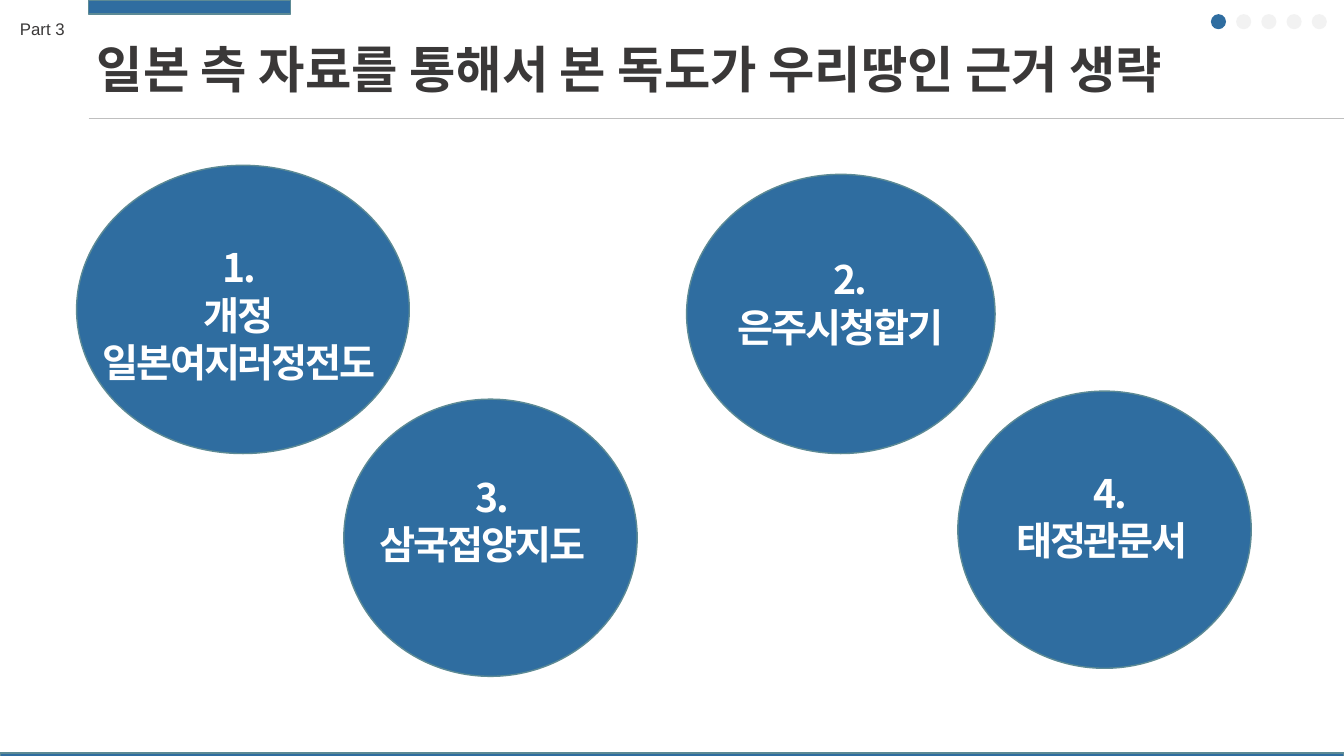
from lxml.etree import SubElement
from pptx import Presentation
from pptx.dml.color import RGBColor
from pptx.enum.shapes import MSO_CONNECTOR, MSO_SHAPE
from pptx.enum.text import MSO_ANCHOR, MSO_AUTO_SIZE, PP_ALIGN
from pptx.oxml.ns import qn
from pptx.util import Inches, Pt

BLUE = RGBColor(0x2F, 0x6D, 0xA0)
EDGE = RGBColor(0x5C, 0x8A, 0x95)
DARK = RGBColor(0x3A, 0x38, 0x38)
PALE = RGBColor(0xF2, 0xF2, 0xF2)
RULE = RGBColor(0xBF, 0xBF, 0xBF)
WHITE = RGBColor(0xFF, 0xFF, 0xFF)
KOREAN = "Noto Sans CJK KR"
LEFT, CENTER = PP_ALIGN.LEFT, PP_ALIGN.CENTER

SOURCES = [
    (["1.", "개정", "일본여지러정전도"], (0.76, 1.64, 3.3, 2.86),
     (0.02, 0.72, 3.18, 1.51), CENTER),
    (["2.", "은주시청합기"], (6.81, 1.73, 3.06, 2.77),
     (0.41, 0.75, 2.43, 1.04), LEFT),
    (["3.", "삼국접양지도"], (3.41, 3.96, 2.91, 2.75),
     (0.26, 0.68, 2.43, 1.04), LEFT),
    (["4.", "태정관문서"], (9.5, 3.88, 2.91, 2.75),
     (0.48, 0.72, 2.06, 1.04), LEFT),
]


def inches(box):
    return [Inches(length) for length in box]


def write(holder, lines, size, color, font=KOREAN, bold=False,
          spacing=0, pitch=None, aligns=(LEFT,)):
    frame = holder.text_frame
    frame.word_wrap = True
    frame.auto_size = MSO_AUTO_SIZE.NONE
    frame.vertical_anchor = MSO_ANCHOR.TOP
    frame.text = "\n".join(lines)
    for paragraph, align in zip(frame.paragraphs, aligns):
        paragraph.alignment = align
        if pitch:
            paragraph.line_spacing = Pt(pitch)
        run = paragraph.runs[0]
        run.font.size = Pt(size)
        run.font.bold = bold
        run.font.color.rgb = color
        run.font.name = font
        properties = run.font._element
        SubElement(properties, qn("a:ea")).set("typeface", font)
        if spacing:
            properties.set("spc", str(round(spacing * 100)))


def add_filled(slide, kind, box, fill, edge=None):
    shape = slide.shapes.add_shape(kind, *inches(box))
    shape.shadow.inherit = False
    shape.fill.solid()
    shape.fill.fore_color.rgb = fill
    if edge is None:
        shape.line.fill.background()
    else:
        shape.line.color.rgb = edge
        shape.line.width = Pt(1)


def add_header(slide, box):
    left, top, width, height = box
    add_filled(slide, MSO_SHAPE.RECTANGLE, (left, top, 2, 0.14), BLUE, EDGE)

    title = slide.shapes.title
    title.left, title.top, title.width, title.height = inches(
        (left - 0.02, top + 0.32, 12.22, 0.71))
    write(title, ["일본 측 자료를 통해서 본 독도가 우리땅인 근거 생략"],
          36, DARK, bold=True, pitch=44)

    part = slide.shapes.add_textbox(*inches((left - 0.78, top + 0.14, 0.7, 0.3)))
    write(part, ["Part 3"], 12, DARK, font="Arial")

    bottom = top + height
    rule = slide.shapes.add_connector(
        MSO_CONNECTOR.STRAIGHT, *inches((left, bottom, left + width, bottom)))
    rule.line.color.rgb = RULE
    rule.line.width = Pt(0.5)
    SubElement(rule._element.spPr, qn("a:effectLst"))


def add_progress(slide, box, current=0, count=5):
    left, top, width, size = box
    step = (width - size) / (count - 1)
    for index in range(count):
        add_filled(slide, MSO_SHAPE.OVAL, (left + index * step, top, size, size),
                   BLUE if index == current else PALE)


def add_source(slide, lines, box, label_box, name_align):
    add_filled(slide, MSO_SHAPE.OVAL, box, BLUE, EDGE)
    dx, dy, width, height = label_box
    label = slide.shapes.add_textbox(
        *inches((box[0] + dx, box[1] + dy, width, height)))
    write(label, lines, 28, WHITE, bold=True, spacing=-1.5, pitch=34,
          aligns=[CENTER] + [name_align] * (len(lines) - 1))


def add_footer(slide, box):
    add_filled(slide, MSO_SHAPE.RECTANGLE, box, BLUE, EDGE)


def main():
    deck = Presentation()
    deck.slide_width, deck.slide_height = Inches(13.33), Inches(7.5)
    slide = deck.slides.add_slide(deck.slide_layouts[5])
    add_header(slide, (0.88, 0, 12.45, 1.17))
    add_progress(slide, (12.01, 0.14, 1.15, 0.15))
    for lines, box, label_box, name_align in SOURCES:
        add_source(slide, lines, box, label_box, name_align)
    add_footer(slide, (0, 7.47, 13.33, 0.05))
    deck.save("out.pptx")


if __name__ == "__main__":
    main()
